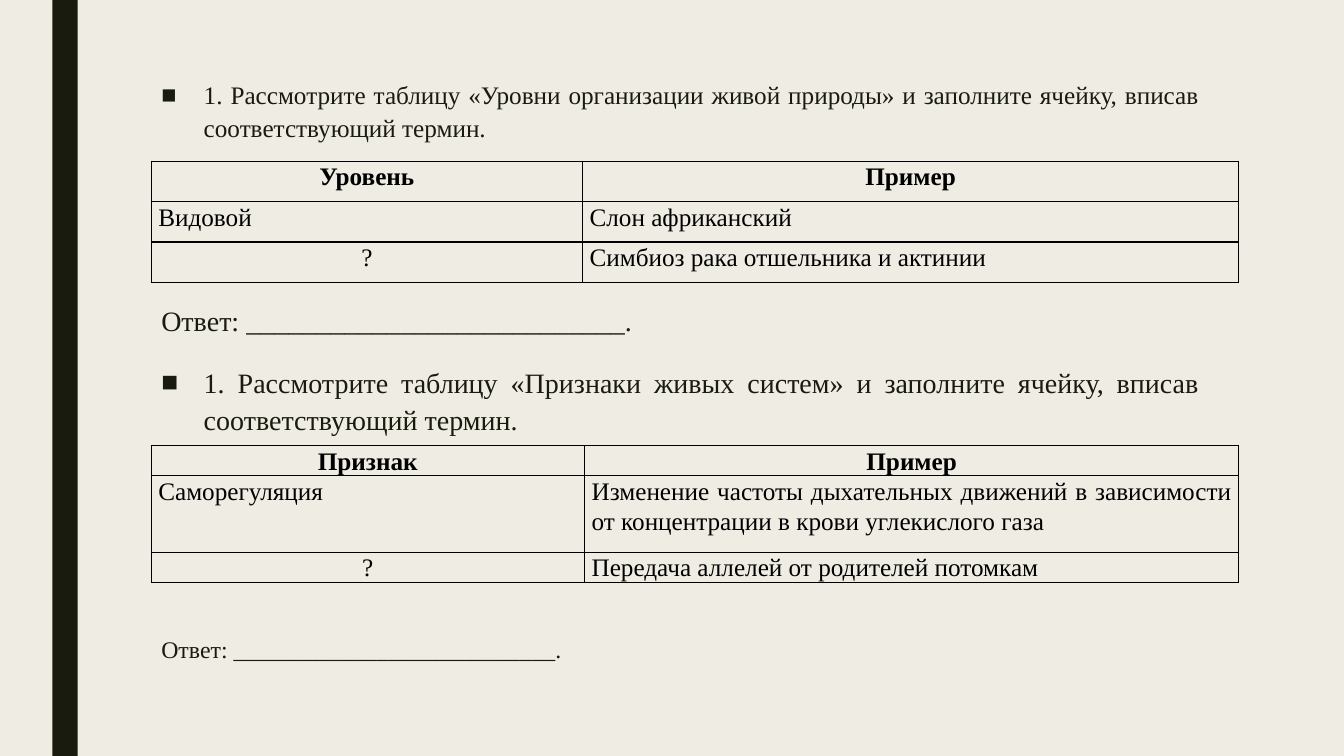
from lxml.etree import SubElement
from pptx import Presentation
from pptx.dml.color import RGBColor
from pptx.enum.shapes import MSO_SHAPE as Shape
from pptx.enum.text import MSO_AUTO_SIZE as AutoSize, PP_ALIGN as Align
from pptx.oxml.ns import qn
from pptx.util import Cm, Pt

COLORS = {"background": "EFEDE3", "dark": "191B0E", "table": "000000"}
FONT = "Times New Roman"
ANSWER = "Ответ: ___________________________."
LEFT = 3.81


def rgb(name):
    return RGBColor.from_string(COLORS[name])


class WorksheetSlide:
    """Holds the current slide and the shared style."""

    def __init__(self, presentation):
        self.slide = presentation.slides.add_slide(presentation.slide_layouts[1])
        title = self.slide.shapes.title.element
        title.getparent().remove(title)
        fill = self.slide.background.fill
        fill.solid()
        fill.fore_color.rgb = rgb("background")

    def style(self, paragraph, size, color, align, bold=False):
        paragraph.alignment = align
        font = paragraph.font
        font.name, font.size, font.bold = FONT, Pt(size), bold
        font.color.rgb = rgb(color)

    def bar(self, left, top, width, height):
        shape = self.slide.shapes.add_shape(
            Shape.RECTANGLE, Cm(left), Cm(top), Cm(width), Cm(height))
        shape.shadow.inherit = False
        shape.fill.solid()
        shape.fill.fore_color.rgb = rgb("dark")
        shape.line.fill.background()

    def body(self, left, top, width, height, items):
        """Each item: text, size, space before, whether it has a bullet."""
        shape = self.slide.placeholders[1]
        shape.left, shape.top = Cm(left), Cm(top)
        shape.width, shape.height = Cm(width), Cm(height)
        frame = shape.text_frame
        frame.auto_size = AutoSize.NONE
        frame.text = "\n".join(item[0] for item in items)
        for paragraph, (_, size, before, bullet) in zip(frame.paragraphs, items):
            paragraph.line_spacing = 1.1
            paragraph.space_before, paragraph.space_after = Pt(before), Pt(8)
            self.bullet(paragraph, bullet)
            self.style(paragraph, size, "dark",
                       Align.JUSTIFY if bullet else Align.LEFT)

    def bullet(self, paragraph, visible):
        properties = paragraph._p.get_or_add_pPr()
        indent = Cm(1.07) if visible else 0
        properties.set("marL", str(indent))
        properties.set("indent", str(-indent))
        if visible:
            SubElement(properties, qn("a:buChar"), char="■")
        else:
            SubElement(properties, qn("a:buNone"))

    def table(self, top, widths, heights, rows):
        table = self.slide.shapes.add_table(
            len(rows), len(widths), Cm(LEFT), Cm(top),
            Cm(sum(widths)), Cm(sum(heights))).table
        table.first_row = table.horz_banding = False
        for column, width in zip(table.columns, widths):
            column.width = Cm(width)
        for row, height, texts in zip(table.rows, heights, rows):
            row.height = Cm(height)
            header = texts is rows[0]
            for cell, text, align in zip(row.cells, texts, (Align.LEFT, Align.JUSTIFY)):
                if header or text == "?":
                    align = Align.CENTER
                self.cell(cell, text, align, header)

    def cell(self, cell, text, align, bold):
        cell.margin_left = cell.margin_right = Cm(0.18)
        cell.margin_top = cell.margin_bottom = 0
        cell.text = text
        paragraph = cell.text_frame.paragraphs[0]
        paragraph.line_spacing = 1.07
        self.style(paragraph, 18, "table", align, bold)
        # Borders come before the fill in the cell properties
        properties = cell._tc.get_or_add_tcPr()
        for side in ("lnL", "lnR", "lnT", "lnB"):
            line = SubElement(properties, qn(f"a:{side}"), w=str(Pt(1)))
            fill = SubElement(line, qn("a:solidFill"))
            SubElement(fill, qn("a:srgbClr"), val=COLORS["table"])
        cell.fill.background()


def main():
    presentation = Presentation()
    presentation.slide_width, presentation.slide_height = Cm(33.87), Cm(19.05)
    worksheet = WorksheetSlide(presentation)

    # Side bar
    worksheet.bar(1.32, 0, 0.64, 19.05)

    # Tasks and answer lines, with room left for the tables
    worksheet.body(LEFT, 1.8, 26.67, 16.51, [
        ("1. Рассмотрите таблицу «Уровни организации живой природы» "
         "и заполните ячейку, вписав соответствующий термин.", 18, 0, True),
        (ANSWER, 20, 104, False),
        ("1. Рассмотрите таблицу «Признаки живых систем» "
         "и заполните ячейку, вписав соответствующий термин.", 20, 10, True),
        (ANSWER, 17, 132, False),
    ])

    # Levels of organisation
    worksheet.table(4.06, (10.87, 16.54), (1.02, 1.02, 1.02), [
        ("Уровень", "Пример"),
        ("Видовой", "Слон африканский"),
        ("?", "Симбиоз рака отшельника и актинии"),
    ])

    # Features of living systems
    worksheet.table(11.23, (10.92, 16.49), (0.76, 1.93, 0.76), [
        ("Признак", "Пример"),
        ("Саморегуляция", "Изменение частоты дыхательных движений в зависимости "
                          "от концентрации в крови углекислого газа"),
        ("?", "Передача аллелей от родителей потомкам"),
    ])

    presentation.save("out.pptx")


if __name__ == "__main__":
    main()
